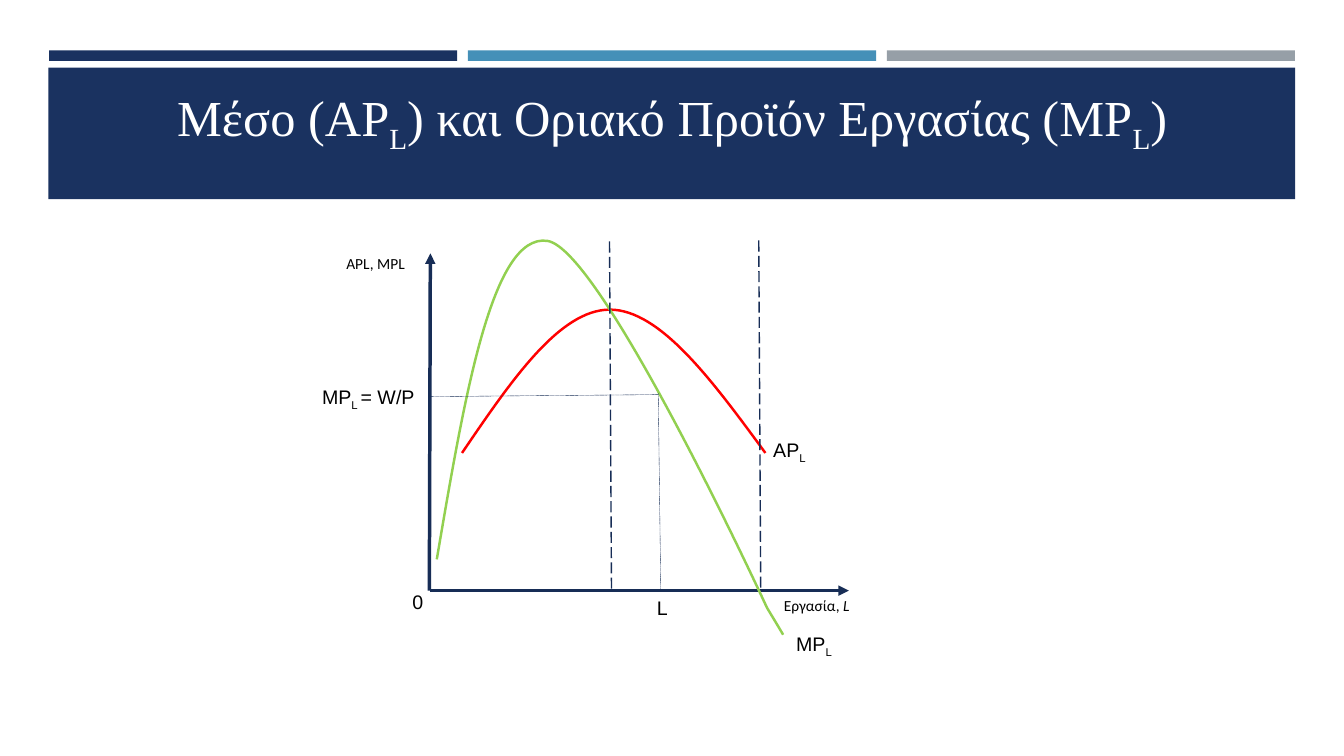
from lxml.etree import SubElement
from pptx import Presentation
from pptx.dml.color import RGBColor
from pptx.enum.dml import MSO_LINE
from pptx.enum.shapes import MSO_CONNECTOR, MSO_SHAPE
from pptx.enum.text import MSO_ANCHOR, PP_ALIGN
from pptx.oxml.ns import qn
from pptx.util import Pt

# Content: colours, text and places in points
NAVY, AXIS, BLACK, WHITE = "1A3260", "172D56", "000000", "FFFFFF"
BAR_COLOURS = [NAVY, "4590B8", "969FA7"]
BAR_LEFT, BAR_TOP, BAR_WIDTH, BAR_HEIGHT, BAR_GAP = 35, 36, 291.6, 7.5, 7.6
BANNER = (34.6, 48.4, 890.6, 93.8)

TITLE_BOX = (46, 55.4, 868.3, 59)
TITLE = [("Μέσο (AP", ""), ("L", "sub"), (") και Οριακό Προϊόν Εργασίας (MP", ""),
         ("L", "sub"), (")", "")]

LEFT, CENTER, RIGHT = PP_ALIGN.LEFT, PP_ALIGN.CENTER, PP_ALIGN.RIGHT
LABELS = [  # box, runs, font, size, alignment
    ((211.3, 177.8, 85, 20.9), [("APL, MPL", "")], "Calibri", 11, RIGHT),
    ((529, 421.9, 85, 20.9), [("Εργασία, ", ""), ("L", "italic")], "Calibri", 11, RIGHT),
    ((211, 271.4, 92.2, 24.5), [("MP", ""), ("L ", "sub"), ("= W/P", "")], "Arial", 14, RIGHT),
    ((462.2, 421.9, 36, 24.5), [("L", "")], "Arial", 14, LEFT),
    ((287.5, 417.6, 36, 24.5), [("0", "")], "Arial", 14, LEFT),
    ((545.2, 309.6, 44.6, 24.5), [("AP", ""), ("L", "sub")], "Arial", 14, LEFT),
    ((561.6, 447.8, 44.6, 24.5), [("MP", ""), ("L", "sub")], "Arial", 14, LEFT),
]

AXES = [((307.4, 181), (306.7, 421.9)), ((606.4, 421.9), (307.4, 421.9))]
WAGE_GUIDES = [((472, 422.3), (470.2, 280.8)), ((470.2, 281.9), (306, 283.3))]
STAGE_GUIDES = [((435.4, 172.5), (436.8, 422.3)), ((542, 171.8), (543.4, 421.2))]

# Each curve: start point, then cubic pieces (two controls and an end)
AVERAGE_PRODUCT = ((330, 323.6), [
    ((365, 272.2), (399.6, 221.2), (435.6, 221.2)),
    ((471.6, 221.2), (509, 272.2), (546.7, 323.6))])
MARGINAL_PRODUCT = ((312, 399.6), [
    ((331.9, 283), (351.4, 166.3), (391, 172.1)),
    ((429.8, 177.8), (547.9, 434.2), (547.9, 434.2)),
    ((551.7, 440.5), (555.6, 446.9), (559.4, 453.4))])
CURVES = [(AVERAGE_PRODUCT, "FF0000"), (MARGINAL_PRODUCT, "92D050")]


def colour(hex_string):
    return RGBColor.from_string(hex_string)


def add_block(slide, box, fill):
    shape = slide.shapes.add_shape(MSO_SHAPE.RECTANGLE, *map(Pt, box))
    shape.shadow.inherit = False
    shape.fill.solid()
    shape.fill.fore_color.rgb = colour(fill)
    shape.line.fill.background()


def add_text(slide, box, runs, font, size, alignment, text_colour=BLACK, anchor=MSO_ANCHOR.TOP):
    text_frame = slide.shapes.add_textbox(*map(Pt, box)).text_frame
    text_frame.word_wrap = True
    text_frame.vertical_anchor = anchor
    paragraph = text_frame.paragraphs[0]
    paragraph.alignment = alignment
    for text, style in runs:
        run = paragraph.add_run()
        run.text = text
        run.font.name = font
        run.font.size = Pt(size)
        run.font.color.rgb = colour(text_colour)
        if style == "italic":
            run.font.italic = True
        elif style == "sub":
            run._r.get_or_add_rPr().set("baseline", "-25000")


def add_line(slide, start, end, width, dash=None, arrow=False):
    connector = slide.shapes.add_connector(MSO_CONNECTOR.STRAIGHT, *map(Pt, start + end))
    connector.line.color.rgb = colour(AXIS)
    connector.line.width = Pt(width)
    if dash:
        connector.line.dash_style = dash
    properties = connector._element.spPr
    if arrow:
        SubElement(properties.find(qn("a:ln")), qn("a:headEnd"), type="triangle")
    SubElement(properties, qn("a:effectLst"))


def add_curve(slide, curve, line_colour):
    start, pieces = curve
    builder = slide.shapes.build_freeform(*map(Pt, start))
    builder.add_line_segments([tuple(map(Pt, piece[-1])) for piece in pieces], close=False)
    shape = builder.convert_to_shape()
    shape.shadow.inherit = False
    shape.fill.background()
    shape.line.color.rgb = colour(line_colour)
    shape.line.width = Pt(1.75)

    # Turn each straight segment into its cubic piece
    segments = list(shape._element.iter(qn("a:lnTo")))
    for segment, piece in zip(segments, pieces):
        outline = segment.getparent()
        cubic = SubElement(outline, qn("a:cubicBezTo"))
        for x, y in piece:
            SubElement(cubic, qn("a:pt"), x=str(Pt(x) - shape.left), y=str(Pt(y) - shape.top))
        outline.replace(segment, cubic)


def main():
    presentation = Presentation()
    presentation.slide_width, presentation.slide_height = Pt(960), Pt(540)
    slide = presentation.slides.add_slide(presentation.slide_layouts[6])

    # Header bars, banner and title
    for index, fill in enumerate(BAR_COLOURS):
        left = BAR_LEFT + index * (BAR_WIDTH + BAR_GAP)
        add_block(slide, (left, BAR_TOP, BAR_WIDTH, BAR_HEIGHT), fill)
    add_block(slide, BANNER, NAVY)
    add_text(slide, TITLE_BOX, TITLE, "Times New Roman", 36, CENTER, WHITE, MSO_ANCHOR.BOTTOM)

    # Diagram
    for start, end in AXES:
        add_line(slide, start, end, 2.5, arrow=True)
    for curve, line_colour in CURVES:
        add_curve(slide, curve, line_colour)
    for start, end in WAGE_GUIDES:
        add_line(slide, start, end, 0.25, MSO_LINE.SQUARE_DOT)
    for start, end in STAGE_GUIDES:
        add_line(slide, start, end, 1, MSO_LINE.LONG_DASH)
    for label in LABELS:
        add_text(slide, *label)

    presentation.save("out.pptx")


if __name__ == "__main__":
    main()
